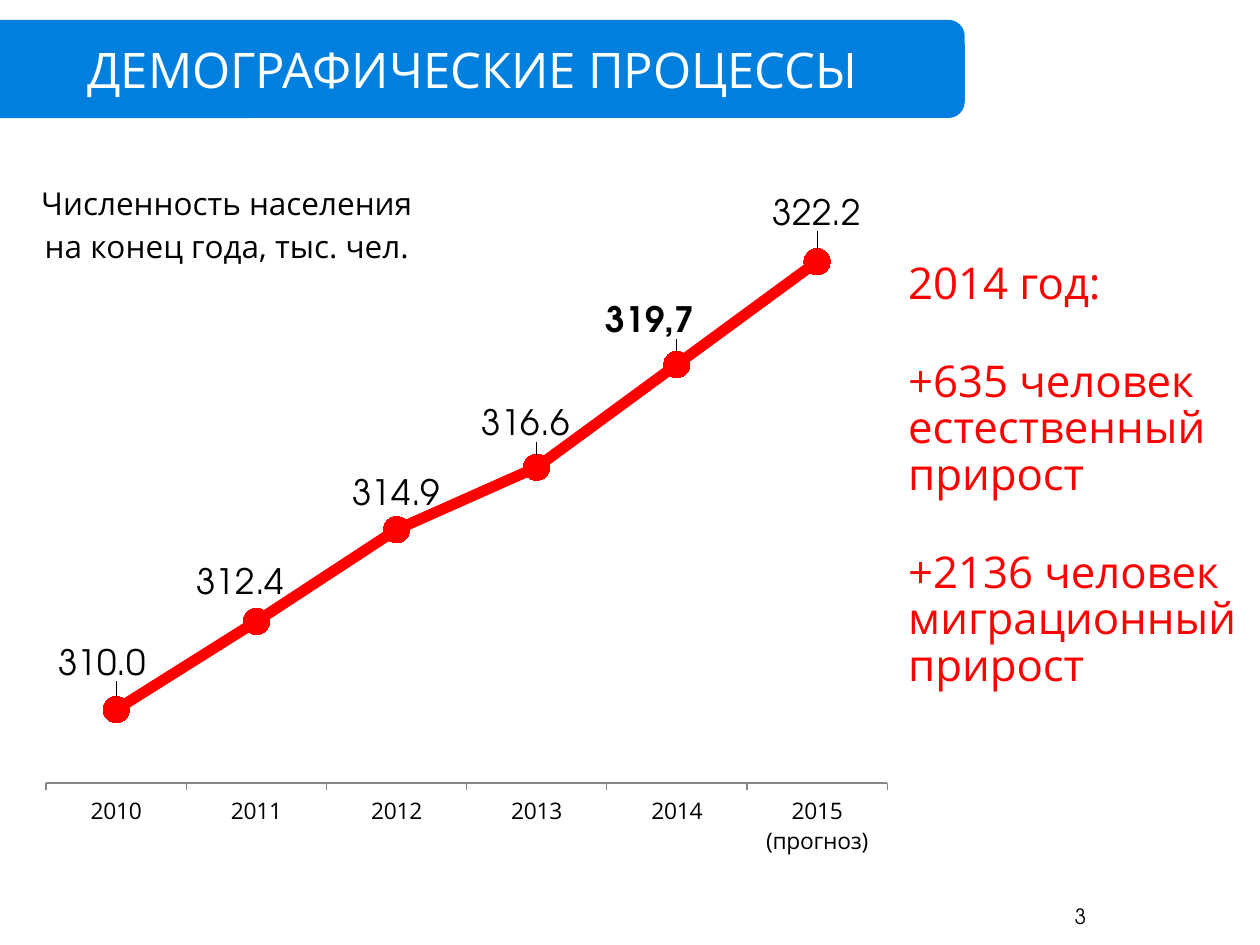
from dataclasses import dataclass

from lxml.etree import SubElement
from pptx import Presentation
from pptx.chart.data import CategoryChartData
from pptx.dml.color import RGBColor
from pptx.enum.chart import XL_CHART_TYPE, XL_LABEL_POSITION, XL_MARKER_STYLE, XL_TICK_MARK
from pptx.enum.shapes import MSO_SHAPE
from pptx.enum.text import MSO_ANCHOR, PP_ALIGN
from pptx.oxml.ns import qn
from pptx.util import Cm, Pt


@dataclass(frozen=True)
class Theme:
    """Colours, fonts and type sizes of the slide."""
    blue: RGBColor = RGBColor(0x00, 0x7F, 0xDE)
    red: RGBColor = RGBColor(0xFF, 0x00, 0x00)
    black: RGBColor = RGBColor(0x00, 0x00, 0x00)
    white: RGBColor = RGBColor(0xFF, 0xFF, 0xFF)
    grey: RGBColor = RGBColor(0x86, 0x86, 0x86)
    text_font: str = "Open Sans"
    number_font: str = "TeX Gyre Adventor"
    title: int = 28
    note: int = 25
    value: int = 20
    caption: int = 18
    category: int = 13
    page: int = 12


class SlideBuilder:
    """Draws styled elements on one slide."""

    def __init__(self, slide, theme):
        """Keep the slide and its theme."""
        self.slide = slide
        self.theme = theme

    def style(self, font, size, color, name, bold=False):
        """Format one font object."""
        font.size, font.name, font.bold = Pt(size), name, bold
        font.color.rgb = color

    def set_text(self, frame, text, size, color, name, align=PP_ALIGN.LEFT, bold=False):
        """Fill a text frame and format its runs."""
        frame.text = text
        for paragraph in frame.paragraphs:
            paragraph.alignment = align
            for run in paragraph.runs:
                self.style(run.font, size, color, name, bold)

    def set_layout(self, parent, index, settings):
        """Give a chart part a manual layout."""
        for old in parent.findall(qn("c:layout")):
            parent.remove(old)
        layout = SubElement(parent, qn("c:layout"))
        manual = SubElement(layout, qn("c:manualLayout"))
        for tag, value in settings.items():
            SubElement(manual, qn(f"c:{tag}")).set("val", str(value))
        parent.insert(index, layout)

    def title(self, text, left, top, width, height):
        """Place the title on a rounded banner."""
        theme = self.theme
        banner = self.slide.shapes.add_shape(MSO_SHAPE.ROUNDED_RECTANGLE, left, top, width, height)
        banner.shadow.inherit = False
        banner.fill.solid()
        banner.fill.fore_color.rgb = theme.blue
        banner.line.fill.background()
        title = self.slide.shapes.title
        title.element.addprevious(banner.element)
        title.left, title.top, title.width, title.height = left, top, width, height
        title.text_frame.vertical_anchor = MSO_ANCHOR.MIDDLE
        self.set_text(title.text_frame, text, theme.title, theme.white, theme.text_font,
                      PP_ALIGN.CENTER)

    def text(self, text, left, top, width, height, size, color, font, align=PP_ALIGN.LEFT,
             anchor=MSO_ANCHOR.TOP):
        """Add a wrapping text box and return its paragraphs."""
        frame = self.slide.shapes.add_textbox(left, top, width, height).text_frame
        frame.word_wrap = True
        frame.vertical_anchor = anchor
        self.set_text(frame, text, size, color, font, align)
        return frame.paragraphs

    def line_chart(self, caption, values, left, top, width, height):
        """Add the line chart and return it."""
        theme = self.theme
        data = CategoryChartData(number_format="0.0")
        data.categories = list(values)
        data.add_series("Численность населения", values.values())
        chart = self.slide.shapes.add_chart(
            XL_CHART_TYPE.LINE_MARKERS, left, top, width, height, data).chart
        chart.has_legend = False
        self.style(chart.font, theme.caption, theme.black, theme.number_font)
        self.set_text(chart.chart_title.text_frame, caption, theme.caption, theme.black,
                      theme.text_font, PP_ALIGN.CENTER)
        edges = {"xMode": "edge", "yMode": "edge"}
        self.set_layout(next(chart.element.iter(qn("c:title"))), 1, {**edges, "x": 0.01, "y": 0.01})
        self.set_layout(next(chart.element.iter(qn("c:plotArea"))), 0,
                        {"layoutTarget": "inner", **edges, "x": 0.02, "y": 0.04, "w": 0.97, "h": 0.84})
        chart.plots[0].vary_by_categories = False
        self.axes(chart)
        self.series_line(chart.plots[0].series[0])
        return chart

    def axes(self, chart):
        """Show the year axis and hide the value axis."""
        theme = self.theme
        years, people = chart.category_axis, chart.value_axis
        years.major_tick_mark = XL_TICK_MARK.OUTSIDE
        years.has_major_gridlines = False
        years.format.line.color.rgb = theme.grey
        years.format.line.width = Pt(0.75)
        self.style(years.tick_labels.font, theme.category, theme.black, theme.text_font)
        people.minimum_scale, people.maximum_scale = 308, 324
        people.has_major_gridlines = False
        people.visible = False

    def series_line(self, series):
        """Draw the series as a thick line with round markers."""
        red = self.theme.red
        series.smooth = False
        series.format.line.color.rgb = red
        series.format.line.width = Pt(6.25)
        series.marker.style, series.marker.size = XL_MARKER_STYLE.CIRCLE, 15
        series.marker.format.fill.solid()
        series.marker.format.fill.fore_color.rgb = red
        series.marker.format.line.color.rgb = red

    def value_labels(self, chart, offsets, custom_labels, width, height):
        """Label the points above the line, shifted by offsets in centimetres."""
        theme = self.theme
        series = chart.plots[0].series[0]
        labels = series.data_labels
        labels.show_value = True
        labels.position = XL_LABEL_POSITION.ABOVE
        labels.number_format, labels.number_format_is_linked = "0.0", False
        self.style(labels.font, theme.value, theme.black, theme.number_font)
        for index in offsets:
            label = series.points[index].data_label
            if index in custom_labels:
                self.set_text(label.text_frame, custom_labels[index], theme.value, theme.black,
                              theme.number_font, PP_ALIGN.CENTER, bold=True)
            else:
                self.style(label.font, theme.value, theme.black, theme.number_font)
            label.position = XL_LABEL_POSITION.ABOVE
        for element in chart.element.iter(qn("c:dLbl")):
            across, down = offsets[int(element.find(qn("c:idx")).get("val"))]
            self.set_layout(element, 1, {"x": Cm(across) / width, "y": Cm(down) / height})


def main():
    """Build the population slide."""
    theme = Theme()
    presentation = Presentation()
    presentation.slide_width, presentation.slide_height = Cm(25.4), Cm(19.05)
    builder = SlideBuilder(presentation.slides.add_slide(presentation.slide_layouts[5]), theme)
    builder.title("ДЕМОГРАФИЧЕСКИЕ ПРОЦЕССЫ", Cm(-0.4), Cm(0.4), Cm(19.85), Cm(1.98))

    population = {"2010": 310, "2011": 312.4, "2012": 314.9, "2013": 316.6,
                  "2014": 319.4, "2015 (прогноз)": 322.2}
    label_offsets = {0: (-0.28, -0.2), 1: (-0.32, -0.04), 3: (-0.22, -0.14),
                     4: (-0.54, -0.14), 5: (0, -0.24)}
    chart_size = Cm(17.48), Cm(14.1)
    chart = builder.line_chart("Численность населения\nна конец года, тыс. чел.", population,
                               Cm(0.58), Cm(3.38), *chart_size)
    builder.value_labels(chart, label_offsets, {4: "319,7"}, *chart_size)

    growth = builder.text(
        "2014 год:\n+635 человек естественный прирост\n+2136 человек\nмиграционный прирост",
        Cm(18.06), Cm(5.16), Cm(8.74), Cm(9.88), theme.note, theme.red, theme.text_font)
    for paragraph in growth:
        paragraph.line_spacing = 0.88
    for paragraph in growth[1:3]:
        paragraph.space_before = Pt(30)

    builder.text("3", Cm(21.08), Cm(18.01), Cm(1.4), Cm(0.84), theme.page, theme.black,
                 theme.number_font, PP_ALIGN.CENTER, MSO_ANCHOR.BOTTOM)
    presentation.save("out.pptx")


if __name__ == "__main__":
    main()
